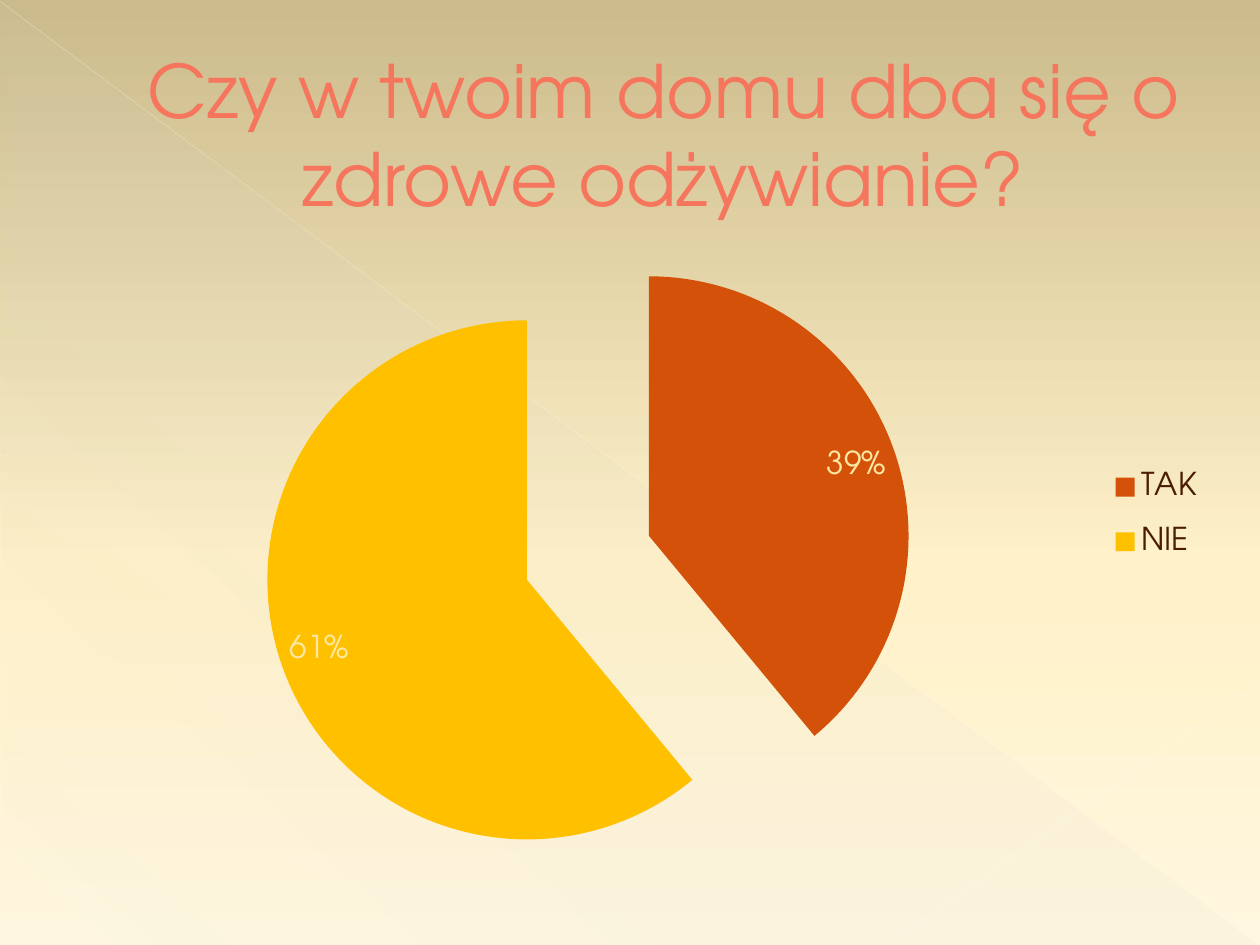
from lxml.etree import SubElement
from pptx import Presentation
from pptx.chart.data import CategoryChartData
from pptx.dml.color import RGBColor
from pptx.enum.chart import XL_CHART_TYPE, XL_LABEL_POSITION, XL_LEGEND_POSITION
from pptx.enum.shapes import MSO_CONNECTOR, MSO_SHAPE
from pptx.enum.text import MSO_ANCHOR, PP_ALIGN
from pptx.oxml.ns import qn
from pptx.util import Pt

FONT = "TeX Gyre Adventor"
HUES = {
    "sand": "CBBB8C", "cream": "FFF1C8", "pale": "FFF7DF", "gray": "D2D2D2",
    "ray": "FFFAEB", "glint": "FFFAED", "title": "F6755D", "edge": "933806",
    "label": "FFE8A2", "legend": "4B1C03", "TAK": "D45109", "NIE": "FFC000",
}


def tint(node, name, alpha=100):
    color = SubElement(node, qn("a:srgbClr"), val=HUES[name])
    if alpha < 100:
        SubElement(color, qn("a:alpha"), val=str(alpha * 1000))


def blend(fill, root, stops, angle):
    fill.gradient()
    grad = next(root.iter(qn("a:gradFill")))
    for child in list(grad):
        grad.remove(child)
    group = SubElement(grad, qn("a:gsLst"))
    for spot, name, alpha in stops:
        tint(SubElement(group, qn("a:gs"), pos=str(spot * 1000)), name, alpha)
    SubElement(grad, qn("a:lin"), ang=str(angle * 60000), scaled="0")


deck = Presentation()
deck.slide_width, deck.slide_height = Pt(720), Pt(540)
slide = deck.slides.add_slide(deck.slide_layouts[5])
shapes = slide.shapes
title = shapes.title

blend(slide.background.fill, slide.element,
      [(0, "sand", 100), (60, "cream", 100), (100, "pale", 100)], 90)

wedge = shapes.add_shape(MSO_SHAPE.RIGHT_TRIANGLE, Pt(0.7), Pt(1.4), Pt(718.6), Pt(538.6))
wedge.shadow.inherit = False
wedge.line.fill.background()
blend(wedge.fill, wedge.element,
      [(0, "gray", 10), (70, "gray", 8), (100, "gray", 1)], 133)

for x1, y1, x2, y2, name, width, alpha in [
    (0, 0.7, 719.3, 539.3, "ray", 0.39, 35),
    (720, 389.5, 509, 539.3, "glint", 0.47, 45),
]:
    ray = shapes.add_connector(MSO_CONNECTOR.STRAIGHT, Pt(x1), Pt(y1), Pt(x2), Pt(y2))
    ray.line.width = Pt(width)
    ray.line.fill.solid()
    solid = next(ray.element.iter(qn("a:solidFill")))
    for child in list(solid):
        solid.remove(child)
    tint(solid, name, alpha)
    SubElement(ray.element.spPr, qn("a:effectLst"))

ray.element.addnext(title.element)
title.left, title.top, title.width, title.height = Pt(36), Pt(21), Pt(648), Pt(110)
frame = title.text_frame
frame.text = "Czy w twoim domu dba się o zdrowe odżywianie?"
frame.word_wrap = True
frame.vertical_anchor = MSO_ANCHOR.MIDDLE
para = frame.paragraphs[0]
para.alignment = PP_ALIGN.CENTER
font = para.runs[0].font
font.name, font.size = FONT, Pt(42)
font.color.rgb = RGBColor.from_string(HUES["title"])
lead = next(title.element.iter(qn("a:pPr")))
lead.set("marL", str(Pt(38)))
lead.set("indent", "0")
props = next(title.element.iter(qn("a:rPr")))
edge = SubElement(props, qn("a:ln"), w=str(Pt(0.5)))
props.insert(0, edge)
tint(SubElement(edge, qn("a:solidFill")), "edge")

data = CategoryChartData()
data.categories = ["TAK", "NIE"]
data.add_series("Series 1", [39, 61])
chart = shapes.add_chart(XL_CHART_TYPE.PIE, Pt(28), Pt(129.6), Pt(669.6), Pt(382.3), data).chart
chart.has_title = False
chart.has_legend = True
legend = chart.legend
legend.position = XL_LEGEND_POSITION.RIGHT
legend.include_in_layout = False

plot = chart.plots[0]
plot.vary_by_categories = True
plot.has_data_labels = True
labels = plot.data_labels
labels.show_percentage, labels.show_value = True, False
labels.number_format, labels.number_format_is_linked = "0%", False
labels.position = XL_LABEL_POSITION.INSIDE_END

for part, name in [(chart, "label"), (labels, "label"), (legend, "legend")]:
    part.font.name, part.font.size = FONT, Pt(18)
    part.font.color.rgb = RGBColor.from_string(HUES[name])

series = plot.series[0]
for i, name in enumerate(plot.categories):
    fill = series.points[i].format.fill
    fill.solid()
    fill.fore_color.rgb = RGBColor.from_string(HUES[name])

root = chart.element
burst = SubElement(root, qn("c:explosion"), val="25")
next(root.iter(qn("c:dPt"))).addprevious(burst)

for tag, spot, sizes in [
    ("c:plotArea", 0, {"x": 0.01, "y": 0.01, "w": 0.9, "h": 0.97}),
    ("c:legend", 1, {"x": 0.89, "y": 0.33, "w": 0.11, "h": 0.2}),
]:
    box = next(root.iter(qn(tag)))
    for old in box.findall(qn("c:layout")):
        box.remove(old)
    layout = SubElement(box, qn("c:layout"))
    box.insert(spot, layout)
    manual = SubElement(layout, qn("c:manualLayout"))
    if tag == "c:plotArea":
        SubElement(manual, qn("c:layoutTarget"), val="inner")
    for key in ["xMode", "yMode"]:
        SubElement(manual, qn("c:" + key), val="edge")
    for key, size in sizes.items():
        SubElement(manual, qn("c:" + key), val=str(size))

deck.save("out.pptx")
